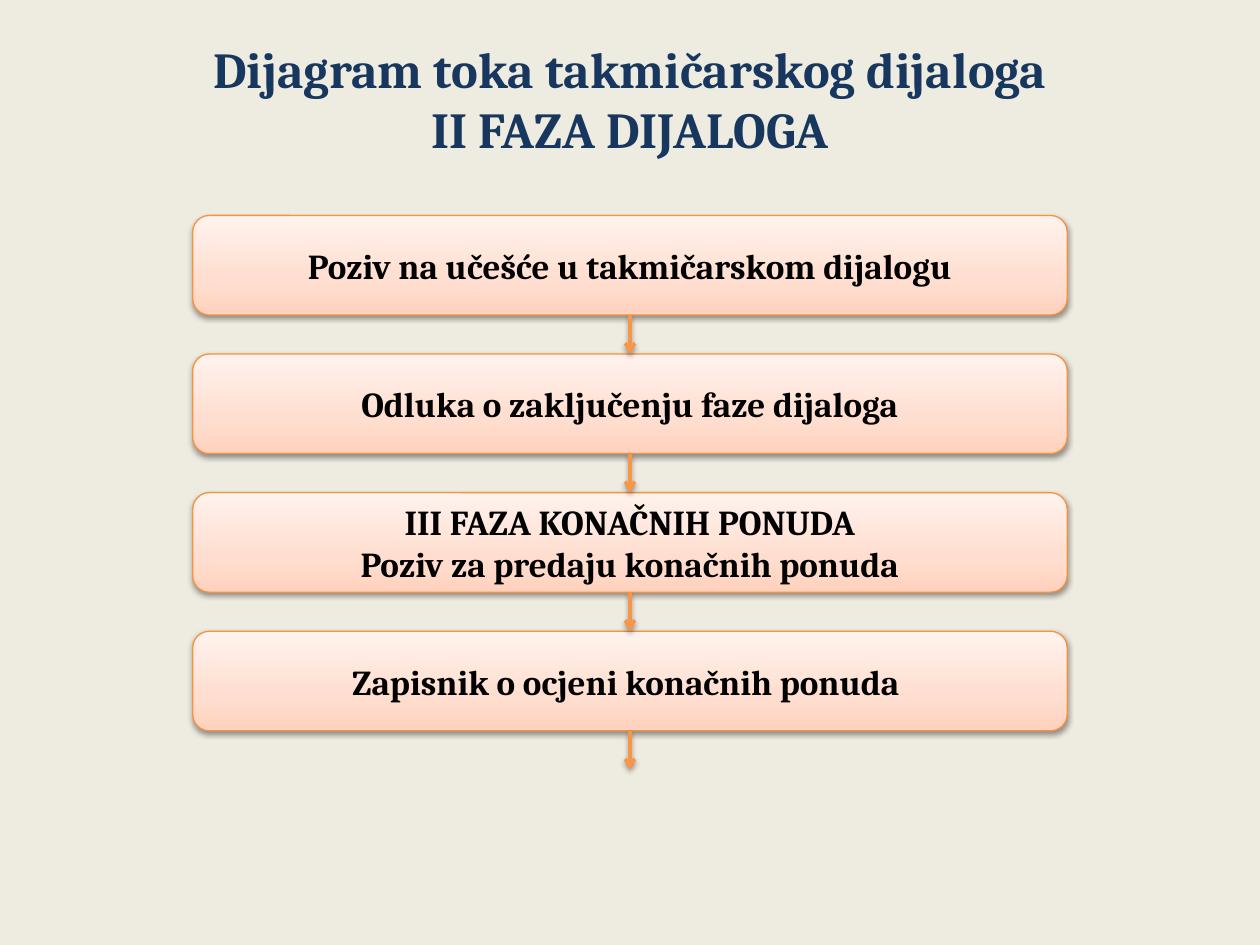
from copy import deepcopy

from lxml import etree
from pptx import Presentation
from pptx import util as u
from pptx.dml.color import RGBColor
from pptx.enum import shapes, text
from pptx.oxml.ns import qn

BACKGROUND = RGBColor(0xEE, 0xEC, 0xE1)
NAVY = RGBColor(0x17, 0x37, 0x5E)
BLACK = RGBColor(0, 0, 0)
BOX_LINE = RGBColor(0xF6, 0x92, 0x40)
ARROW = RGBColor(0xF7, 0x96, 0x46)
PEACH_STOPS = [
    (0, RGBColor(0xFF, 0xD2, 0xBD)),
    (0.35, RGBColor(0xFF, 0xDE, 0xD0)),
    (1, RGBColor(0xFF, 0xF2, 0xED)),
]

TITLE_FONT = {"name": "Cambria", "size": u.Pt(28.8), "bold": True}
STEP_FONT = {"name": "Cambria", "size": u.Pt(20), "bold": True}

TITLE = "Dijagram toka takmičarskog dijaloga\vII FAZA DIJALOGA"
STEPS = [
    "Poziv na učešće u takmičarskom dijalogu",
    "Odluka o zaključenju faze dijaloga",
    "III FAZA KONAČNIH PONUDA\nPoziv za predaju konačnih ponuda",
    "Zapisnik o ocjeni konačnih ponuda ",
]


def write(shape, wording, font_format, color):
    """Centre the wording in the shape, in the given font."""
    frame = shape.text_frame
    frame.word_wrap = True
    frame.vertical_anchor = text.MSO_ANCHOR.MIDDLE
    frame.text = wording
    for paragraph in frame.paragraphs:
        paragraph.alignment = text.PP_ALIGN.CENTER
        for run in paragraph.runs:
            for name, value in font_format.items():
                setattr(run.font, name, value)
            run.font.color.rgb = color


def add_shadow(properties):
    """Put a soft shadow just below the part."""
    effects = properties.find(qn("a:effectLst"))
    if effects is None:
        effects = etree.SubElement(properties, qn("a:effectLst"))
    shadow = etree.SubElement(
        effects, qn("a:outerShdw"), blurRad=str(u.Pt(3.1)),
        dist=str(u.Pt(1.6)), dir="5400000", rotWithShape="0")
    black = etree.SubElement(shadow, qn("a:srgbClr"), val="000000")
    etree.SubElement(black, qn("a:alpha"), val="38000")


def fill_peach(shape):
    """Shade the shape from dark at the bottom to light at the top."""
    shape.fill.gradient()
    shape.fill.gradient_angle = 90
    first_stop = next(shape._element.spPr.iter(qn("a:gs")))
    first_stop.addnext(deepcopy(first_stop))
    for stop, (position, color) in zip(shape.fill.gradient_stops, PEACH_STOPS):
        stop.position = position
        stop.color.rgb = color


def add_title(slide, left, top, width, height):
    title = slide.shapes.add_textbox(left, top, width, height)
    write(title, TITLE, TITLE_FONT, NAVY)


def add_step(slide, wording, left, top, width, height):
    step = slide.shapes.add_shape(
        shapes.MSO_SHAPE.ROUNDED_RECTANGLE, left, top, width, height)
    fill_peach(step)
    step.line.color.rgb = BOX_LINE
    step.line.width = u.Pt(0.75)
    step.shadow.inherit = False
    add_shadow(step._element.spPr)
    write(step, wording, STEP_FONT, BLACK)
    return step


def add_arrow(slide, step, next_step, length):
    """Lead down from a step, to the next one if there is one."""
    x = step.left + step.width // 2
    bottom = step.top + step.height
    arrow = slide.shapes.add_connector(
        shapes.MSO_CONNECTOR.STRAIGHT, x, bottom, x, bottom + length)
    arrow.begin_connect(step, 2)
    if next_step is not None:
        arrow.end_connect(next_step, 0)
    arrow.line.color.rgb = ARROW
    arrow.line.width = u.Pt(2)
    etree.SubElement(arrow.line._get_or_add_ln(), qn("a:tailEnd"), type="arrow")
    add_shadow(arrow._element.spPr)


def add_flow(slide, left, top, width, step_height, gap):
    steps = [
        add_step(slide, wording, left, top + row * (step_height + gap),
                 width, step_height)
        for row, wording in enumerate(STEPS)
    ]
    # The last arrow leads on to the following slide
    for step, next_step in zip(steps, steps[1:] + [None]):
        add_arrow(slide, step, next_step, gap)


def main():
    deck = Presentation()
    deck.slide_width, deck.slide_height = u.Inches(10), u.Inches(7.5)
    slide = deck.slides.add_slide(deck.slide_layouts[6])
    slide.background.fill.solid()
    slide.background.fill.fore_color.rgb = BACKGROUND

    add_title(slide, u.Inches(0.5), u.Inches(0.3), u.Inches(9), u.Inches(0.96))
    add_flow(slide, u.Inches(1.53), u.Inches(1.71), u.Inches(6.94),
             step_height=u.Inches(0.79), gap=u.Inches(0.31))
    deck.save("out.pptx")


if __name__ == "__main__":
    main()
